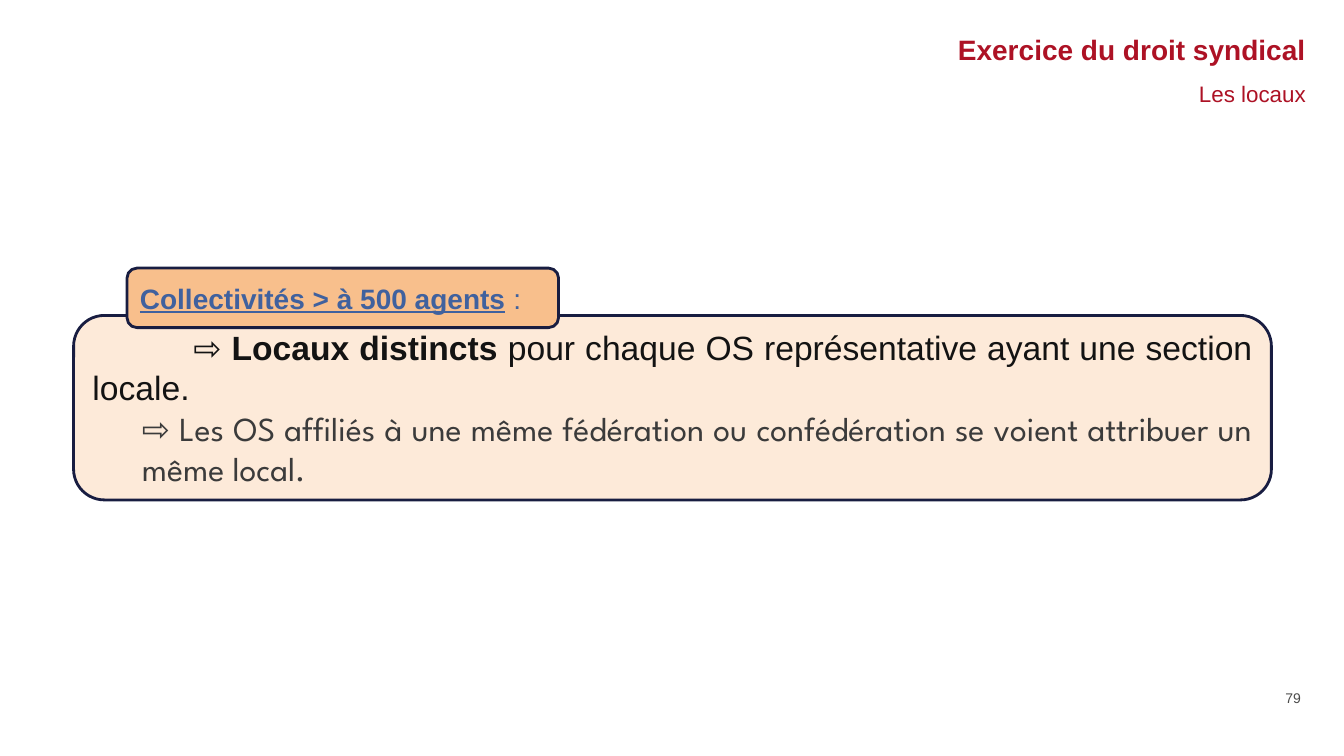
import pptx
import pptx.util
import pptx.dml.color
import pptx.enum.shapes
import pptx.enum.text

Inches = pptx.util.Inches
Pt = pptx.util.Pt
Align = pptx.enum.text.PP_ALIGN
Anchor = pptx.enum.text.MSO_ANCHOR
RED, NAVY, BLACK, GREY = "AD1225", "181D41", "131313", "3B3B3B"


def color(value):
    return pptx.dml.color.RGBColor.from_string(value)


def write(para, text, font="Arial", size=24, ink=BLACK, bold=False, underline=False):
    span = para.add_run()
    span.text = text
    span.font.name = font
    span.font.size = Pt(size)
    span.font.color.rgb = color(ink)
    span.font.bold = bold
    span.font.underline = underline


deck = pptx.Presentation()
deck.slide_width = Inches(13.33)
deck.slide_height = Inches(7.5)
page = deck.slides.add_slide(deck.slide_layouts[5])

title = page.shapes.title
title.left, title.top, title.width, title.height = map(Inches, (0.92, 0.34, 12.13, 0.34))
subtitle = page.shapes.add_textbox(*map(Inches, (0.92, 0.76, 12.13, 0.37)))
number = page.shapes.add_textbox(*map(Inches, (10.24, 6.79, 2.76, 0.31)))

headings = [
    (title, "Exercice du droit syndical", 20, RED, True, 0.9, Anchor.MIDDLE),
    (subtitle, "Les locaux", 16, RED, False, 0.9, Anchor.MIDDLE),
    (number, "79", 10, "4B4B4A", False, 1.0, Anchor.TOP),
]
for box, text, size, ink, bold, spacing, anchor in headings:
    box.text_frame.word_wrap = True
    box.text_frame.vertical_anchor = anchor
    para = box.text_frame.paragraphs[0]
    para.alignment = Align.RIGHT
    para.line_spacing = spacing
    write(para, text, size=size, ink=ink, bold=bold)

panels = []
for place, fill in [((0.73, 3.13, 11.88, 1.83), "FDEAD9"), ((1.26, 2.66, 4.28, 0.59), "F8BF8C")]:
    panel = page.shapes.add_shape(
        pptx.enum.shapes.MSO_SHAPE.ROUNDED_RECTANGLE, *map(Inches, place))
    panel.shadow.inherit = False
    panel.fill.solid()
    panel.fill.fore_color.rgb = color(fill)
    panel.line.color.rgb = color(NAVY)
    panel.line.width = Pt(2)
    panel.text_frame.word_wrap = True
    panel.text_frame.vertical_anchor = Anchor.MIDDLE
    panel.text_frame.paragraphs[0].alignment = Align.JUSTIFY
    panels.append(panel)
rules, label = panels

premises = rules.text_frame.paragraphs[0]
premises._p.get_or_add_pPr().set("indent", str(Inches(1)))
write(premises, "⇨ ")
write(premises, "Locaux distincts ", bold=True)
write(premises, "pour chaque OS représentative ayant une section locale.")

sharing = rules.text_frame.add_paragraph()
sharing.alignment = Align.JUSTIFY
sharing._p.get_or_add_pPr().set("marL", str(Inches(0.49)))
write(sharing, "⇨ Les OS affiliés à une même fédération ou confédération "
      "se voient attribuer un même local.", font="League Spartan", ink=GREY)

scope = label.text_frame.paragraphs[0]
write(scope, "Collectivités > à 500 agents", size=20, ink="40619E", bold=True, underline=True)
write(scope, " :", size=20, ink="40619E")

deck.save("out.pptx")
